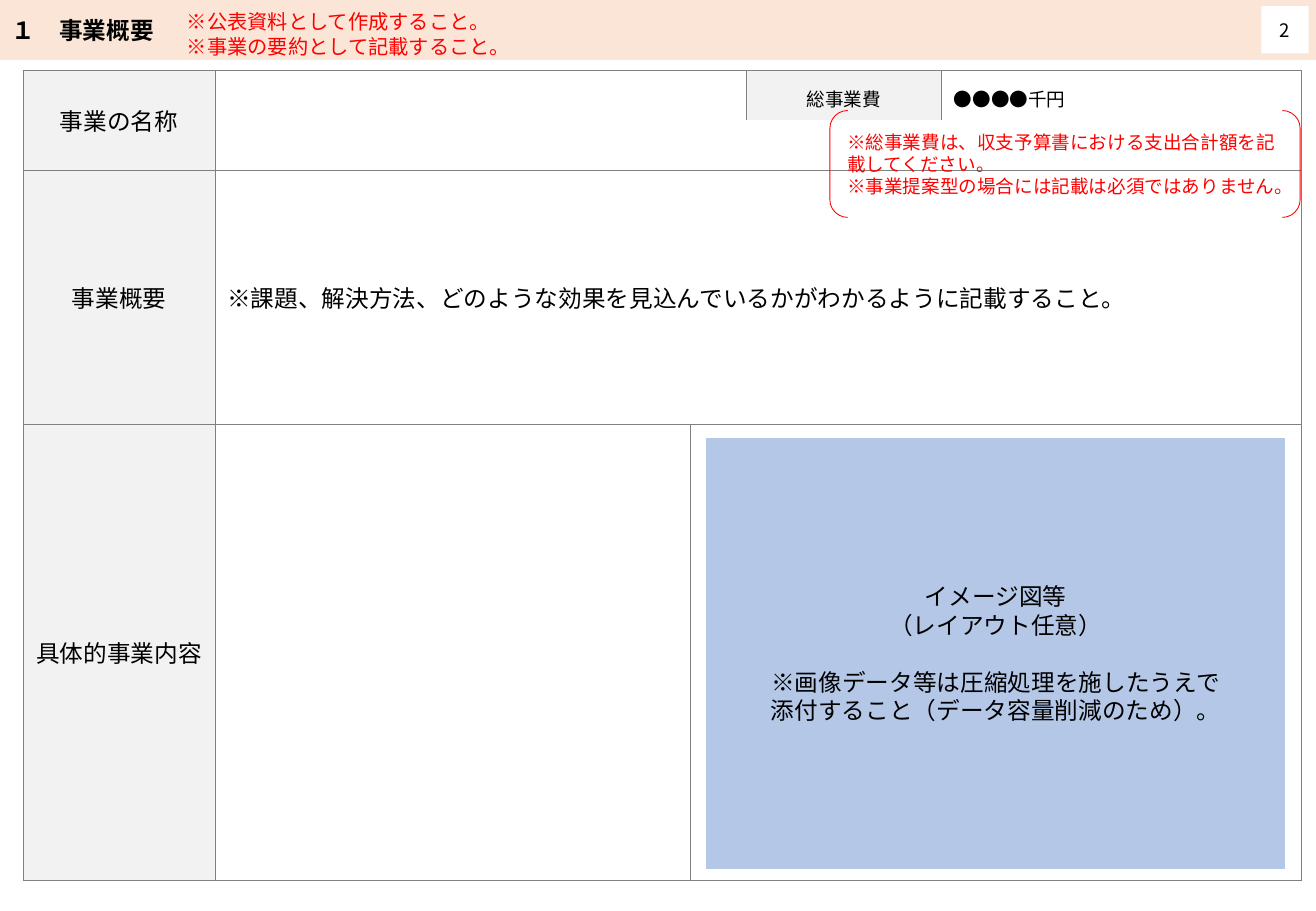
import pptx
import pptx.util
import pptx.dml.color
import pptx.enum.shapes
import pptx.enum.text
import pptx.oxml
import pptx.oxml.ns

Inches, Pt = pptx.util.Inches, pptx.util.Pt
PRESET = pptx.enum.shapes.MSO_SHAPE
ALIGN = pptx.enum.text.PP_ALIGN
MIDDLE = pptx.enum.text.MSO_ANCHOR.MIDDLE

COLORS = {"band": "FBE5D6", "label": "F2F2F2", "figure": "B4C7E7", "page": "FFFFFF",
          "grid": "808080", "note": "FF0000", "ink": "000000"}


class SlideBuilder:
    """Holds the style and the current slide, and draws each kind of element."""

    font = "Noto Sans CJK JP"

    def __init__(self, slide):
        self.slide = slide

    def rgb(self, color):
        return pptx.dml.color.RGBColor.from_string(COLORS[color])

    def add_lines(self, frame, lines, size, color="ink", bold=False, formats=None):
        for index, line in enumerate(lines):
            paragraph = frame.paragraphs[0] if index == 0 else frame.add_paragraph()
            for name, value in (formats or {}).items():
                setattr(paragraph, name, value)
            run = paragraph.add_run()
            run.text = line
            for name, value in {"size": Pt(size), "bold": bold, "name": self.font}.items():
                setattr(run.font, name, value)
            run.font.color.rgb = self.rgb(color)
            east_asian = pptx.oxml.parse_xml(
                f'<a:ea {pptx.oxml.ns.nsdecls("a")} typeface="{self.font}"/>')
            run._r.get_or_add_rPr().append(east_asian)

    def shape(self, preset, box, lines, size, fill=None, line=None, width=1,
              color="ink", bold=False, align=ALIGN.CENTER):
        shape = self.slide.shapes.add_shape(preset, *map(Inches, box))
        shape.shadow.inherit = False
        for part, paint in ((shape.fill, fill), (shape.line.fill, line)):
            if paint:
                part.solid()
                part.fore_color.rgb = self.rgb(paint)
            else:
                part.background()
        if line:
            shape.line.width = Pt(width)
        for name, value in {"word_wrap": True, "vertical_anchor": MIDDLE}.items():
            setattr(shape.text_frame, name, value)
        self.add_lines(shape.text_frame, lines, size, color, bold, {"alignment": align})
        return shape

    def text(self, box, lines, size, color):
        frame = self.slide.shapes.add_textbox(*map(Inches, box)).text_frame
        fit = pptx.enum.text.MSO_AUTO_SIZE.SHAPE_TO_FIT_TEXT
        for name, value in {"word_wrap": True, "auto_size": fit}.items():
            setattr(frame, name, value)
        self.add_lines(frame, lines, size, color)

    def border(self, cell, hidden):
        properties = cell._tc.get_or_add_tcPr()
        for side in "LRTB":
            paint = ("<a:noFill/>" if side == hidden else
                     f'<a:solidFill><a:srgbClr val="{COLORS["grid"]}"/></a:solidFill>')
            properties.append(pptx.oxml.parse_xml(
                f'<a:ln{side} {pptx.oxml.ns.nsdecls("a")} w="{Pt(0.5)}">{paint}</a:ln{side}>'))

    def table(self, box, widths, heights, merges, entries, labels, open_edges):
        table = self.slide.shapes.add_table(
            len(heights), len(widths), *map(Inches, box)).table
        for name in ("first_row", "horz_banding"):
            setattr(table, name, False)
        for column, width in zip(table.columns, widths):
            column.width = Inches(width)
        for row, height in zip(table.rows, heights):
            row.height = Inches(height)
        for start, end in merges:
            table.cell(*start).merge(table.cell(*end))
        for row in range(len(heights)):
            for column in range(len(widths)):
                cell = table.cell(row, column)
                self.border(cell, open_edges.get(row) if column else None)
                if (row, column) in labels:
                    cell.fill.solid()
                    cell.fill.fore_color.rgb = self.rgb("label")
                else:
                    cell.fill.background()
                cell.vertical_anchor = MIDDLE
        for place, (entry, size, formats) in entries.items():
            self.add_lines(table.cell(*place).text_frame, [entry], size, formats=formats)


def main():
    presentation = pptx.Presentation()
    presentation.slide_width = Inches(10.83)
    presentation.slide_height = Inches(7.5)
    builder = SlideBuilder(presentation.slides.add_slide(presentation.slide_layouts[6]))

    builder.shape(PRESET.RECTANGLE, (0, 0, 10.83, 0.49), ["１　事業概要"], 14,
                  fill="band", line="band", bold=True, align=ALIGN.LEFT)

    centered = {"alignment": ALIGN.CENTER}
    cost_spacing = {"line_spacing": Pt(20)}
    builder.table(
        (0.19, 0.58, 10.52, 6.6),
        widths=[1.58, 3.91, 0.46, 1.61, 2.96],
        heights=[0.31, 0.42, 2.09, 3.75],
        merges=[((0, 0), (1, 0)), ((0, 1), (0, 2)), ((1, 1), (1, 4)),
                ((2, 1), (2, 4)), ((3, 2), (3, 4))],
        entries={
            (0, 0): ("事業の名称", 14, centered),
            (0, 3): ("総事業費", 11, {**centered, **cost_spacing}),
            (0, 4): ("●●●●千円", 11, cost_spacing),
            (2, 0): ("事業概要", 14, centered),
            (2, 1): ("※課題、解決方法、どのような効果を見込んでいるかがわかるように記載すること。", 14, {}),
            (3, 0): ("具体的事業内容", 14, centered),
        },
        labels={(0, 0), (1, 0), (2, 0), (3, 0), (0, 3)},
        open_edges={0: "B", 1: "T"})

    builder.text((1.44, 0.03, 4.38, 0.5),
                 ["※公表資料として作成すること。", "※事業の要約として記載すること。"], 12, "note")

    figure = builder.shape(
        PRESET.RECTANGLE, (5.82, 3.61, 4.75, 3.54),
        ["イメージ図等", "（レイアウト任意）", "※画像データ等は圧縮処理を施したうえで",
         "添付すること（データ容量削減のため）。"], 14, fill="figure", line="figure")
    figure.text_frame.paragraphs[2].space_before = Pt(17)

    builder.shape(PRESET.RECTANGLE, (10.38, 0.05, 0.39, 0.39), ["2"], 11, fill="page")
    builder.shape(PRESET.DOUBLE_BRACKET, (6.83, 0.91, 3.87, 0.88),
                  ["※総事業費は、収支予算書における支出合計額を記載してください。",
                   "※事業提案型の場合には記載は必須ではありません。"], 11,
                  line="note", width=0.5, color="note", align=ALIGN.LEFT)

    presentation.save("out.pptx")


if __name__ == "__main__":
    main()
